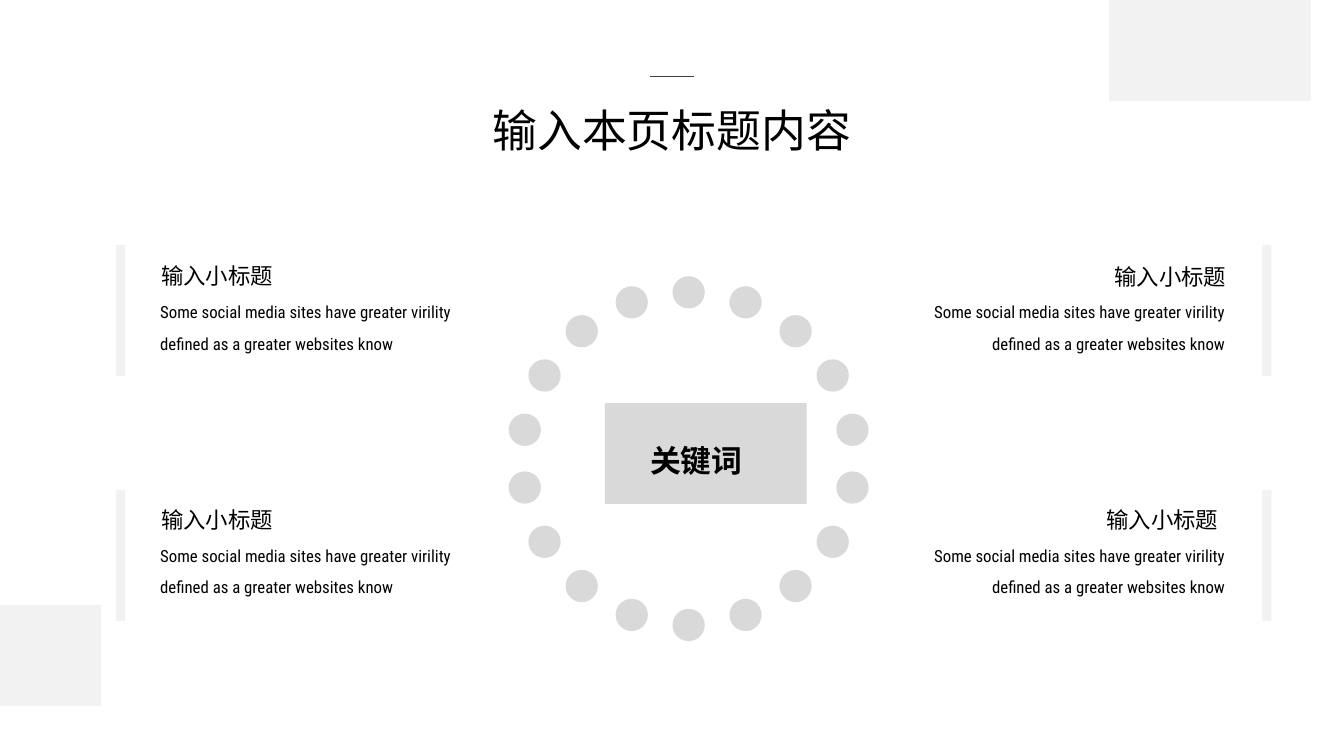
from math import cos, radians, sin

from lxml import etree
from pptx import Presentation
from pptx.dml.color import RGBColor
from pptx.enum import shapes, text
from pptx.oxml import ns
from pptx.util import Inches, Pt

BLACK = RGBColor(0x00, 0x00, 0x00)
DARK = RGBColor(0x40, 0x40, 0x40)
GREY = RGBColor(0xD9, 0xD9, 0xD9)
PALE = RGBColor(0xF2, 0xF2, 0xF2)
FONT = "Roboto Condensed"
LEFT, CENTER, RIGHT = text.PP_ALIGN.LEFT, text.PP_ALIGN.CENTER, text.PP_ALIGN.RIGHT
STEPS = 8

prs = Presentation()
prs.slide_width, prs.slide_height = Inches(13.33), Inches(7.5)
s = prs.slides.add_slide(prs.slide_layouts[6])


def paint(sp, color):
    sp.shadow.inherit = False
    sp.fill.solid()
    sp.fill.fore_color.rgb = color
    sp.line.fill.background()


def write(sp, words, size, align, wrap=True, grow=True):
    tf = sp.text_frame
    tf.word_wrap = wrap
    tf.auto_size = text.MSO_AUTO_SIZE.SHAPE_TO_FIT_TEXT if grow else text.MSO_AUTO_SIZE.NONE
    p = tf.paragraphs[0]
    p.alignment = align
    r = p.add_run()
    r.text = words
    r.font.size, r.font.name, r.font.color.rgb = Pt(size), FONT, BLACK
    return p


# Blobs: a smooth curve through knots, then straight corners at the slide edge
center_knots = [
    (6.23, 5.3), (6.12, 5.23), (5.99, 5.03), (5.96, 4.85), (5.99, 4.63), (6.05, 4.47),
    (6.16, 4.21), (6.27, 4.02), (6.4, 3.84), (6.54, 3.69), (6.7, 3.59), (6.86, 3.55),
    (6.96, 3.56), (7.12, 3.62), (7.27, 3.73), (7.43, 3.9), (7.62, 4.19), (7.78, 4.48),
    (7.84, 4.7), (7.86, 4.88), (7.82, 5.04), (7.77, 5.11), (7.65, 5.22), (7.46, 5.32),
    (7.23, 5.37), (6.97, 5.4), (6.7, 5.4), (6.41, 5.36), (6.23, 5.3),
]
top_knots = [
    (13.33, 0.84), (13.26, 0.98), (13.08, 1.22), (12.92, 1.36), (12.74, 1.44),
    (12.55, 1.46), (12.28, 1.41), (11.98, 1.26), (11.75, 1.09), (11.59, 0.95),
    (11.39, 0.75), (11.2, 0.54), (11, 0.27), (10.92, 0.13), (10.85, 0),
]
bottom_knots = [
    (0, 5.64), (0.19, 5.69), (0.35, 5.79), (0.43, 5.88), (0.52, 6.06), (0.55, 6.32),
    (0.53, 6.6), (0.45, 6.93), (0.35, 7.23), (0.25, 7.47), (0.23, 7.5),
]
blobs = [
    (center_knots, [], GREY),
    (top_knots, [(13.33, 0)], PALE),
    (bottom_knots, [(0, 7.5)], PALE),
]
for knots, corners, color in blobs:
    closed = knots[0] == knots[-1]
    before = knots[-2] if closed else knots[0]
    after = knots[1] if closed else knots[-1]
    padded = [before, *knots, after]
    outline = []
    for a, b, c, d in zip(padded, padded[1:], padded[2:], padded[3:]):
        for step in range(1, STEPS + 1):
            t = step / STEPS
            outline.append(tuple(
                (2 * q + (n - m) * t + (2 * m - 5 * q + 4 * n - o) * t ** 2
                 + (3 * q - m - 3 * n + o) * t ** 3) / 2
                for m, q, n, o in zip(a, b, c, d)))
    builder = s.shapes.build_freeform(*knots[0], scale=Inches(1))
    builder.add_line_segments(outline + corners, close=True)
    paint(builder.convert_to_shape(), color)

# Ring of dots
DOTS, RADIUS, DOT = 18, 1.65, 0.32
for i in range(DOTS):
    angle = radians(i * 360 / DOTS)
    x, y = 6.83 + RADIUS * sin(angle), 4.55 - RADIUS * cos(angle)
    dot = s.shapes.add_shape(shapes.MSO_SHAPE.OVAL, Inches(x - DOT / 2), Inches(y - DOT / 2),
                             Inches(DOT), Inches(DOT))
    paint(dot, GREY)

# Keyword
keyword = s.shapes.add_shape(shapes.MSO_SHAPE.RECTANGLE, Inches(6.44), Inches(4.31),
                             Inches(0.93), Inches(0.39))
paint(keyword, GREY)
p = write(keyword, "关键词", 22, CENTER, wrap=False)
p.line_spacing, p.space_before = 1.2, Pt(7.5)
p.runs[0].font.bold = True
tf = keyword.text_frame
tf.vertical_anchor = text.MSO_ANCHOR.TOP
tf.margin_left = tf.margin_top = tf.margin_right = tf.margin_bottom = 0

# Four captions: bar, heading, body
captions = [
    (1.15, 2.43, 1.5, 2.55, 1.49, 2.84, LEFT),
    (1.15, 4.86, 1.5, 4.97, 1.49, 5.26, LEFT),
    (12.52, 2.43, 10.94, 2.56, 8.67, 2.84, RIGHT),
    (12.52, 4.86, 10.86, 4.97, 8.67, 5.26, RIGHT),
]
for bar_x, bar_y, head_x, head_y, body_x, body_y, align in captions:
    bar = s.shapes.add_shape(shapes.MSO_SHAPE.RECTANGLE, Inches(bar_x), Inches(bar_y),
                             Inches(0.09), Inches(1.3))
    paint(bar, PALE)
    body = s.shapes.add_textbox(Inches(body_x), Inches(body_y), Inches(3.58), Inches(0.69))
    p = write(body, "Some social media sites have greater virility "
                    "defined as a greater websites know", 12, align)
    p.line_spacing = Pt(22.2)
    head = s.shapes.add_textbox(Inches(head_x), Inches(head_y), Inches(1.32), Inches(0.37))
    write(head, "输入小标题", 16, align, wrap=False)

# Title with a short rule above
title = s.shapes.add_textbox(Inches(4.31), Inches(0.98), Inches(4.71), Inches(0.67))
p = write(title, "输入本页标题内容", 32, CENTER, grow=False)
p.line_spacing, p.space_before = 0.9, Pt(10)
title.text_frame.vertical_anchor = text.MSO_ANCHOR.MIDDLE
rule = s.shapes.add_connector(shapes.MSO_CONNECTOR.STRAIGHT, Inches(6.45), Inches(0.76),
                              Inches(6.88), Inches(0.76))
rule.line.color.rgb, rule.line.width = DARK, Pt(0.5)
etree.SubElement(rule.line._get_or_add_ln().getparent(), ns.qn("a:effectLst"))

prs.save("out.pptx")
